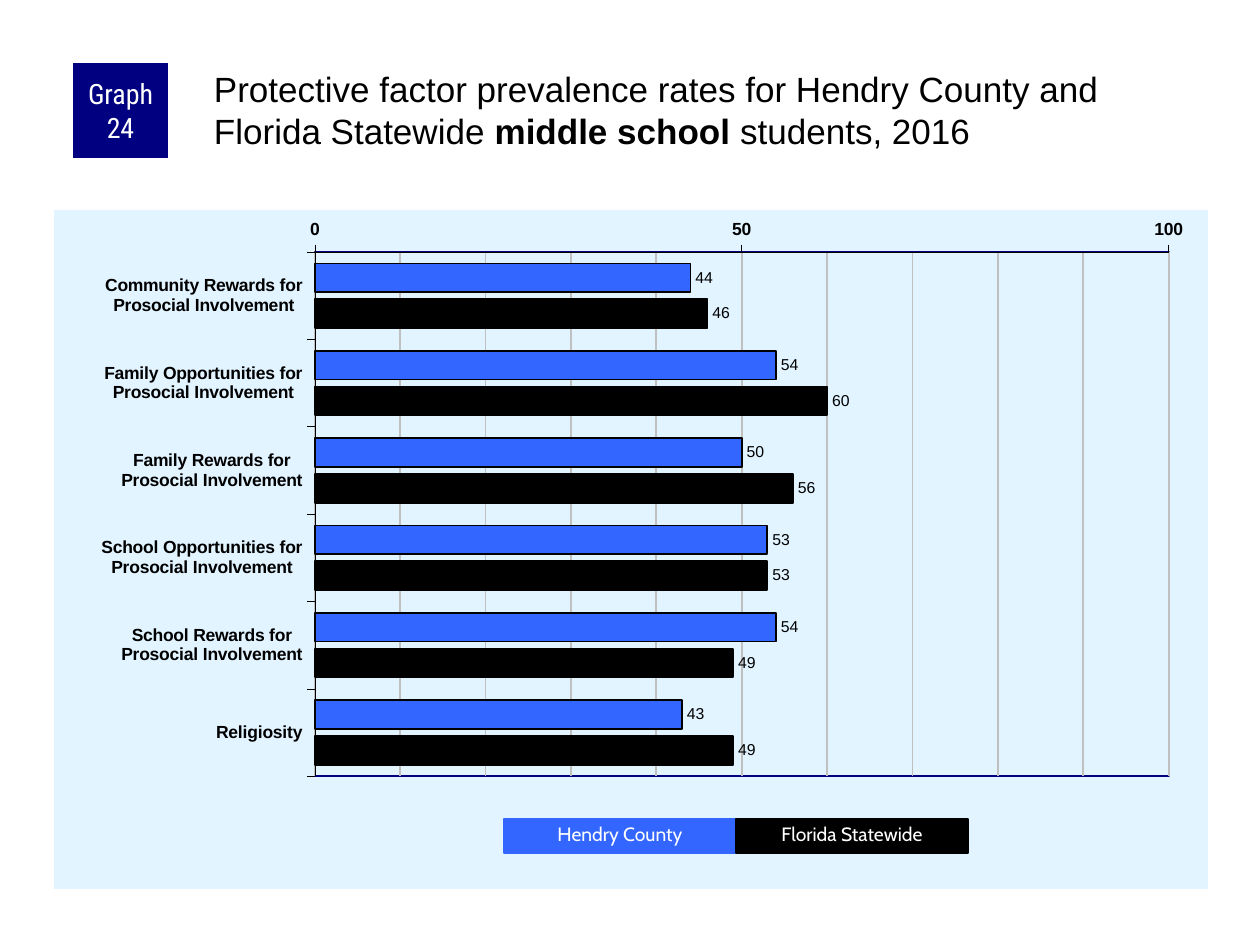
"""Build the slide of protective factor prevalence rates for middle school students."""
from dataclasses import dataclass

from lxml import etree
from pptx import Presentation
from pptx import util as u
from pptx.chart.data import CategoryChartData
from pptx.dml.color import RGBColor
from pptx.enum import chart as ch, shapes, text
from pptx.oxml import parse_xml
from pptx.oxml.ns import nsdecls, qn

PX = 914400 / 126


@dataclass(frozen=True)
class Theme:
    """Colours, fonts and type sizes of the slide."""
    navy: str = "000080"
    blue: str = "3366FF"
    black: str = "000000"
    white: str = "FFFFFF"
    pale: str = "E1F4FF"
    grid: str = "C0C0C0"
    body: str = "Arial"
    badge_font: str = "Roboto Condensed"
    key_font: str = "Cabin"
    title_size: float = 20
    badge_size: float = 16
    chart_size: float = 11.8
    key_size: float = 11
    axis_size: float = 10
    label_size: float = 9


@dataclass(frozen=True)
class Box:
    """Place and size in px."""
    left: int
    top: int
    width: int
    height: int

    def emu(self) -> list[u.Emu]:
        """Return the four lengths in EMU."""
        return [px(n) for n in (self.left, self.top, self.width, self.height)]


@dataclass(frozen=True)
class Region:
    """One surveyed region with its colour and rates."""
    name: str
    colour: str
    rates: tuple[int, ...]


THEME = Theme()
FACTORS = (
    "Community Rewards for\nProsocial Involvement",
    "Family Opportunities for\nProsocial Involvement",
    "Family Rewards for\nProsocial Involvement",
    "School Opportunities for\nProsocial Involvement",
    "School Rewards for\nProsocial Involvement",
    "Religiosity",
)
REGIONS = (
    Region("Hendry County", THEME.blue, (44, 54, 50, 53, 54, 43)),
    Region("Florida Statewide", THEME.black, (46, 60, 56, 53, 49, 49)),
)
KEY = Box(504, 819, 232, 34)


def px(n: int) -> u.Emu:
    """Turn px into EMU."""
    return u.Emu(round(n * PX))


def rgb(colour: str) -> RGBColor:
    """Turn a hex colour into an RGBColor."""
    return RGBColor.from_string(colour)


def style_font(font, size: float, face: str = THEME.body,
               colour: str = THEME.black, bold: bool = False) -> None:
    """Set size, face, colour and weight of a font."""
    font.size, font.name, font.bold = u.Pt(size), face, bold
    font.color.rgb = rgb(colour)


def style_line(line, colour: str, width: float) -> None:
    """Set colour and width of a line."""
    line.color.rgb = rgb(colour)
    line.width = u.Pt(width)


def add_text(paragraph, words: str, **font_format) -> None:
    """Add a formatted run to a paragraph."""
    run = paragraph.add_run()
    run.text = words
    style_font(run.font, **font_format)


def set_insets(frame, left: int, top: int, right: int, bottom: int) -> None:
    """Set the insets of a text frame in px and let it wrap."""
    frame.margin_left, frame.margin_top = px(left), px(top)
    frame.margin_right, frame.margin_bottom = px(right), px(bottom)
    frame.word_wrap = True


def add_block(slide, box: Box, fill: str, words: str, **font_format):
    """Draw a filled rectangle with white centred text."""
    block = slide.shapes.add_shape(shapes.MSO_SHAPE.RECTANGLE, *box.emu())
    block.shadow.inherit = False
    block.fill.solid()
    block.fill.fore_color.rgb = rgb(fill)
    block.line.fill.background()
    block.text_frame.vertical_anchor = text.MSO_ANCHOR.MIDDLE
    paragraph = block.text_frame.paragraphs[0]
    paragraph.alignment = text.PP_ALIGN.CENTER
    add_text(paragraph, words, colour=THEME.white, **font_format)
    return block


def add_key(slide, region: Region, position: int) -> None:
    """Draw one entry of the key below the bars."""
    box = Box(KEY.left + position * KEY.width, KEY.top, KEY.width, KEY.height)
    entry = add_block(slide, box, region.colour, region.name,
                      size=THEME.key_size, face=THEME.key_font)
    style_line(entry.line, region.colour, 0.75)
    entry.text_frame.vertical_anchor = text.MSO_ANCHOR.TOP
    entry.text_frame.auto_size = text.MSO_AUTO_SIZE.SHAPE_TO_FIT_TEXT
    entry.text_frame.paragraphs[0].line_spacing = 0.9
    set_insets(entry.text_frame, 13, 6, 13, 6)


def area_format(fill: str = "", line: str = ""):
    """Return chart shape properties with an optional fill and 1 pt line."""
    def paint(colour: str) -> str:
        if not colour:
            return "<a:noFill/>"
        return f'<a:solidFill><a:srgbClr val="{colour}"/></a:solidFill>'
    return parse_xml(f'<c:spPr {nsdecls("c", "a")}>{paint(fill)}'
                     f'<a:ln w="12700">{paint(line)}</a:ln></c:spPr>')


def style_areas(chart) -> None:
    """Style the chart area, plot area and minor gridlines and place the plot."""
    space = chart.element.find(qn("c:chart"))
    plot = space.find(qn("c:plotArea"))
    space.addnext(area_format(fill=THEME.pale))
    plot.append(area_format(line=THEME.navy))
    for gridlines in plot.iter(qn("c:minorGridlines")):
        gridlines.append(area_format(line=THEME.grid))
    for old in plot.findall(qn("c:layout")):
        plot.remove(old)
    layout = parse_xml(f'<c:layout {nsdecls("c")}><c:manualLayout/></c:layout>')
    settings = (("layoutTarget", "inner"), ("xMode", "edge"), ("yMode", "edge"),
                ("x", "0.226"), ("y", "0.062"), ("w", "0.74"), ("h", "0.772"))
    for tag, value in settings:
        etree.SubElement(layout[0], qn(f"c:{tag}")).set("val", value)
    plot.insert(0, layout)


def add_rates(slide) -> None:
    """Draw the bar chart of rates by factor and region."""
    data = CategoryChartData()
    data.categories = FACTORS
    for region in REGIONS:
        data.add_series(region.name, region.rates)
    chart = slide.shapes.add_chart(ch.XL_CHART_TYPE.BAR_CLUSTERED,
                                   *Box(54, 210, 1154, 679).emu(), data).chart
    chart.has_title = chart.has_legend = False
    style_font(chart.font, THEME.chart_size)
    bars = chart.plots[0]
    bars.gap_width, bars.overlap, bars.vary_by_categories = 80, -25, False
    for series, region in zip(bars.series, REGIONS):
        series.invert_if_negative = False
        series.format.fill.solid()
        series.format.fill.fore_color.rgb = rgb(region.colour)
        style_line(series.format.line, THEME.black, 1)
        series.data_labels.show_value = True
        series.data_labels.position = ch.XL_LABEL_POSITION.OUTSIDE_END
        style_font(series.data_labels.font, THEME.label_size)
    factors, rates = chart.category_axis, chart.value_axis
    for axis in (factors, rates):
        axis.major_tick_mark = ch.XL_TICK_MARK.OUTSIDE
        axis.minor_tick_mark = ch.XL_TICK_MARK.NONE
        style_font(axis.tick_labels.font, THEME.axis_size, bold=True)
        style_line(axis.format.line, THEME.black, 0.25)
    factors.reverse_order = True
    factors.crosses = ch.XL_AXIS_CROSSES.MAXIMUM
    rates.minimum_scale, rates.maximum_scale = 0, 100
    rates.major_unit, rates.minor_unit = 50, 10
    rates.has_major_gridlines = rates.has_minor_gridlines = True
    style_line(rates.major_gridlines.format.line, THEME.grid, 1)
    style_areas(chart)


def main() -> None:
    """Build and save the slide."""
    deck = Presentation()
    deck.slide_width, deck.slide_height = px(1260), px(945)
    slide = deck.slides.add_slide(deck.slide_layouts[6])
    add_rates(slide)
    badge = add_block(slide, Box(73, 63, 95, 95), THEME.navy, "Graph 24",
                      size=THEME.badge_size, face=THEME.badge_font)
    set_insets(badge.text_frame, 6, 0, 6, 0)
    title = slide.shapes.add_textbox(*Box(210, 63, 998, 105).emu()).text_frame
    set_insets(title, 4, 4, 0, 0)
    for words, bold in (
            ("Protective factor prevalence rates for Hendry County and Florida Statewide ", False),
            ("middle school ", True), ("students, 2016", False)):
        add_text(title.paragraphs[0], words, size=THEME.title_size, bold=bold)
    for position, region in enumerate(REGIONS):
        add_key(slide, region, position)
    deck.save("out.pptx")


if __name__ == "__main__":
    main()
